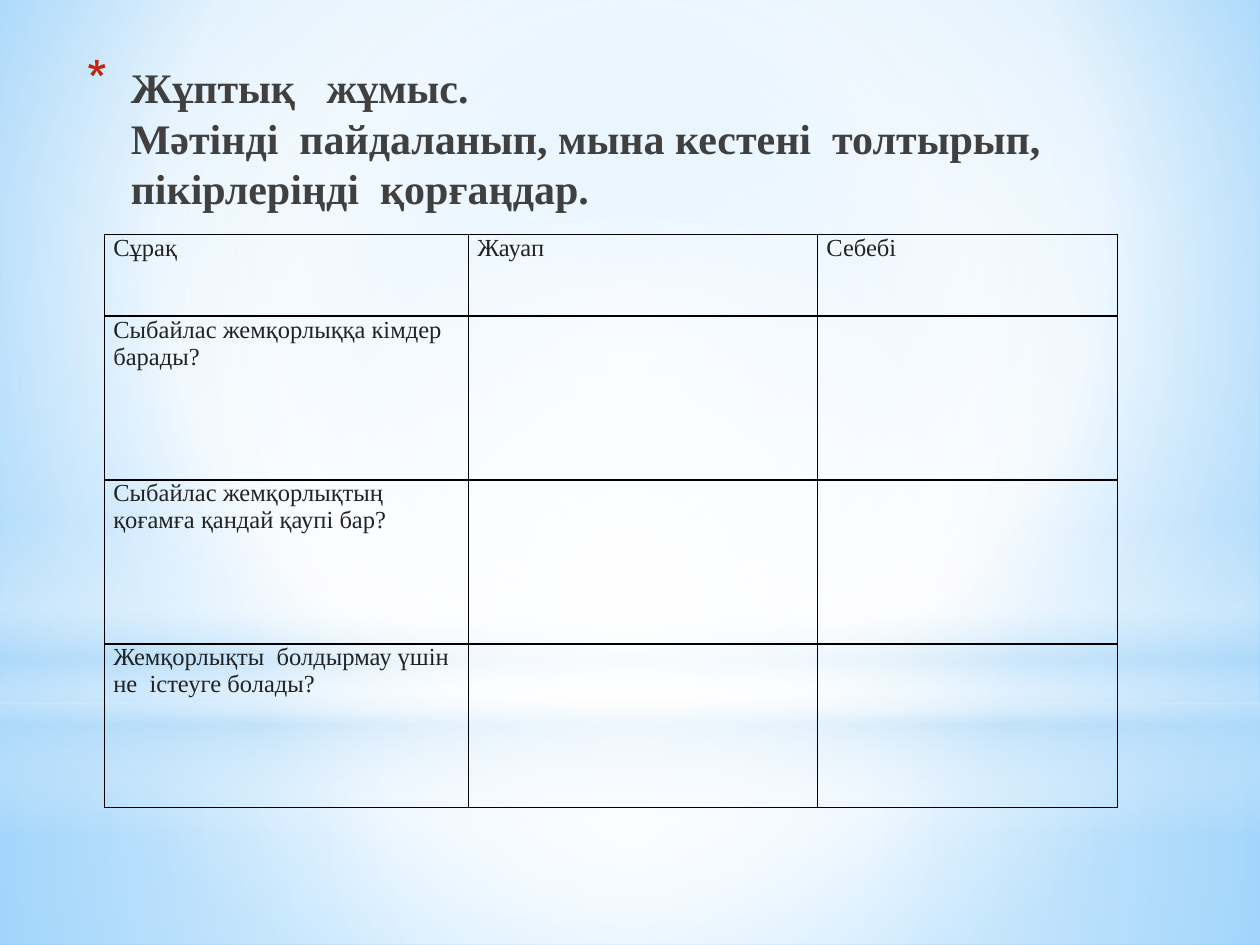
from dataclasses import dataclass

from lxml.etree import SubElement
from pptx import Presentation
from pptx.dml.color import RGBColor
from pptx.enum.shapes import MSO_SHAPE as Preset
from pptx.enum.text import MSO_ANCHOR as Anchor
from pptx.oxml import parse_xml
from pptx.oxml.ns import nsdecls, qn
from pptx.util import Inches, Pt


@dataclass(frozen=True)
class Theme:
    font: str = "Times New Roman"
    title_size: int = 24
    cell_size: int = 14
    title: str = "404040"
    cell: str = "222222"
    bullet: str = "C3260C"
    border: str = "000000"
    white: str = "FFFFFF"
    haze: str = "B4DCFA"
    sky: str = "9ED5FF"
    deep_sky: str = "5BB9FF"


def set_gradient(fill, owner, stops, focus=None):
    """Fill with (position, colour, opacity) stops: round a focus, or downwards."""
    fill.gradient()
    grad = next(owner.iter(qn("a:gradFill")))
    for child in list(grad):
        grad.remove(child)
    stop_list = SubElement(grad, qn("a:gsLst"))
    for position, color, opacity in stops:
        stop = SubElement(stop_list, qn("a:gs"), pos=str(position * 1000))
        tint = SubElement(stop, qn("a:srgbClr"), val=color)
        if opacity < 100:
            SubElement(tint, qn("a:alpha"), val=str(opacity * 1000))
    if focus:
        path = SubElement(grad, qn("a:path"), path="circle")
        sides = {side: str(value * 1000) for side, value in zip("ltrb", focus)}
        SubElement(path, qn("a:fillToRect"), **sides)
    else:
        SubElement(grad, qn("a:lin"), ang="5400000", scaled="0")


class Deck:
    def __init__(self, theme):
        self.theme = theme
        self.show = Presentation()
        self.show.slide_width, self.show.slide_height = Inches(10), Inches(7.5)
        self.page = self.show.slides.add_slide(self.show.slide_layouts[6])

    def background(self, stops, focus):
        set_gradient(self.page.background.fill, self.page.element, stops, focus)

    def glow(self, preset, top, height, stops, focus=None):
        """Add a full-width translucent shape."""
        shape = self.page.shapes.add_shape(
            preset, 0, Inches(top), Inches(10), Inches(height))
        shape.shadow.inherit = False
        shape.line.fill.background()
        set_gradient(shape.fill, shape.element, stops, focus)

    def span(self, para, text, size, color, bold=False):
        run = para.add_run()
        run.text = text
        run.font.name = self.theme.font
        run.font.size = Pt(size)
        run.font.bold = bold
        run.font.color.rgb = RGBColor.from_string(color)

    def title(self, left, top, width, height, lines):
        box = self.page.shapes.add_textbox(*map(Inches, (left, top, width, height)))
        frame = box.text_frame
        frame.word_wrap = True
        frame.vertical_anchor = Anchor.TOP
        para = frame.paragraphs[0]
        props = para._p.get_or_add_pPr()
        indent = Inches(0.35)
        props.set("marL", str(indent))
        props.set("indent", str(-indent))
        color = SubElement(props, qn("a:buClr"))
        SubElement(color, qn("a:srgbClr"), val=self.theme.bullet)
        SubElement(props, qn("a:buSzPct"), val="128000")
        SubElement(props, qn("a:buChar"), char="*")
        for number, line in enumerate(lines):
            if number:
                para.add_line_break()
            self.span(para, line, self.theme.title_size, self.theme.title, bold=True)

    def table(self, left, top, widths, heights, rows):
        frame = self.page.shapes.add_table(
            len(heights), len(widths), Inches(left), Inches(top),
            Inches(sum(widths)), Inches(sum(heights)))
        table = frame.table
        table.first_row = table.horz_banding = False
        for column, width in zip(table.columns, widths):
            column.width = Inches(width)
        for row, height, texts in zip(table.rows, heights, rows):
            row.height = Inches(height)
            for cell, text in zip(row.cells, texts):
                self.style_cell(cell)
                if text:
                    self.span(cell.text_frame.paragraphs[0], text,
                              self.theme.cell_size, self.theme.cell)

    def style_cell(self, cell):
        cell.margin_left = cell.margin_right = Inches(0.07)
        cell.margin_top = cell.margin_bottom = 0
        cell.fill.background()
        props = cell._tc.get_or_add_tcPr()
        for place, side in enumerate("LRTB"):
            props.insert(place, parse_xml(
                f'<a:ln{side} {nsdecls("a")} w="{Pt(1)}"><a:solidFill>'
                f'<a:srgbClr val="{self.theme.border}"/></a:solidFill></a:ln{side}>'))


def main():
    theme = Theme()
    white, haze = theme.white, theme.haze
    center = (50, 50, 50, 50)
    deck = Deck(theme)

    deck.background([(0, theme.sky, 100), (60, white, 100), (100, theme.deep_sky, 100)],
                    (20, 10, 20, 60))
    deck.glow(Preset.RECTANGLE, 5.58, 1.92,
              [(0, white, 91), (37, white, 76), (100, haze, 79)], center)
    deck.glow(Preset.RECTANGLE, 0, 5.58,
              [(0, white, 89), (48, white, 62), (100, haze, 79)], center)
    deck.glow(Preset.RECTANGLE, 4.12, 2.5,
              [(0, white, 0), (29, white, 30), (45, haze, 40),
               (55, white, 26), (65, haze, 60), (100, white, 0)])
    deck.glow(Preset.OVAL, 1.75, 5.58, [(0, white, 100), (56, white, 0)], center)

    deck.title(0.59, 0.44, 9, 1.25, [
        "Жұптық   жұмыс. ",
        "Мәтінді  пайдаланып, мына кестені  толтырып, пікірлеріңді  қорғаңдар.",
    ])
    questions = [
        "Сыбайлас жемқорлыққа кімдер барады?",
        "Сыбайлас жемқорлықтың  қоғамға қандай қаупі бар?",
        "Жемқорлықты  болдырмау үшін не  істеуге болады?",
    ]
    deck.table(0.83, 1.86, [2.89, 2.77, 2.38], [0.65] + [1.3] * len(questions),
               [("Сұрақ", "Жауап", "Себебі")] + [(text, "", "") for text in questions])
    deck.show.save("out.pptx")


if __name__ == "__main__":
    main()
